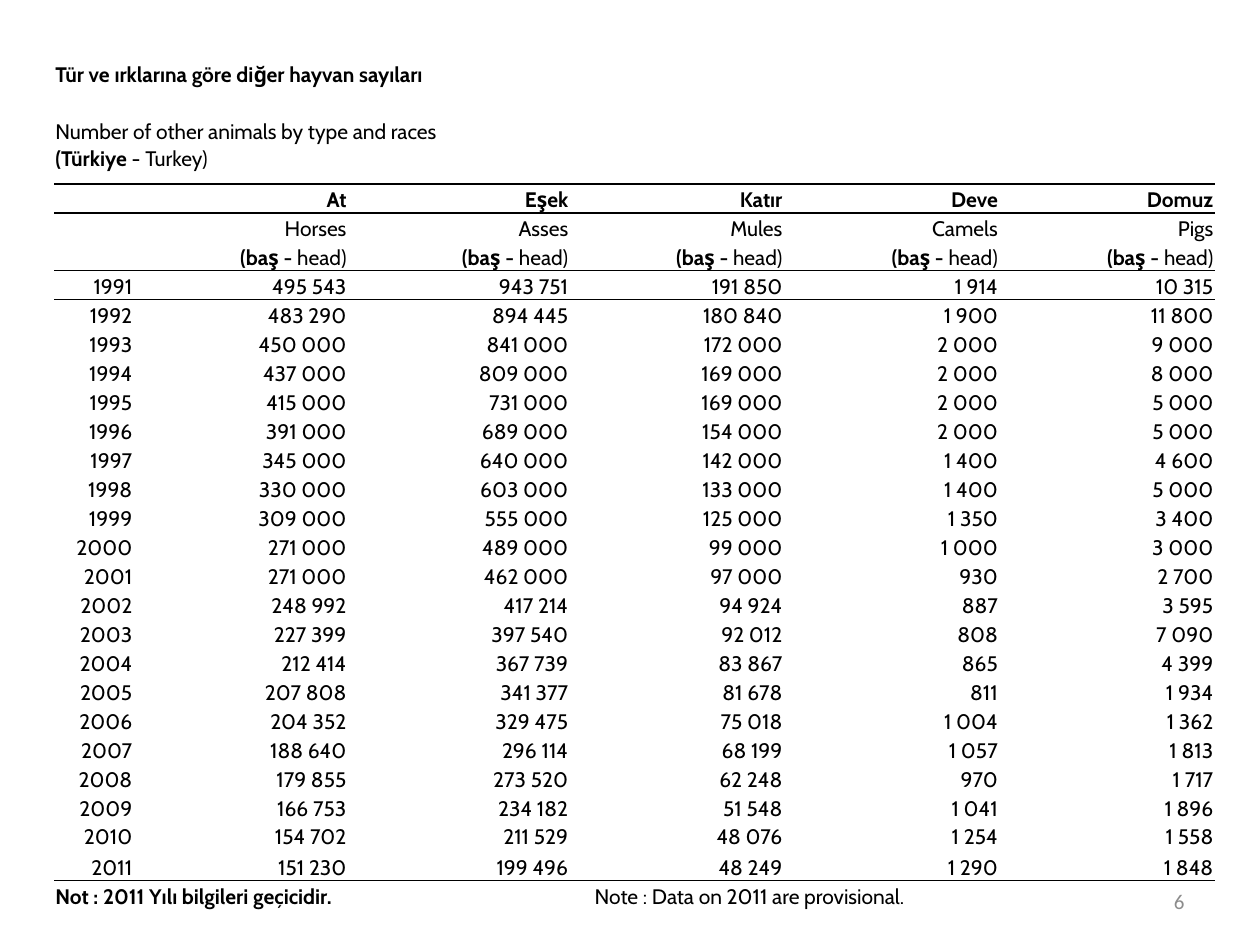
from dataclasses import dataclass

from lxml import etree
from pptx import Presentation
from pptx.dml.color import RGBColor
from pptx.enum.text import MSO_ANCHOR, PP_ALIGN
from pptx.oxml.ns import qn
from pptx.util import Inches, Pt

LEFT, RIGHT = PP_ALIGN.LEFT, PP_ALIGN.RIGHT
TOP, MIDDLE, BOTTOM = MSO_ANCHOR.TOP, MSO_ANCHOR.MIDDLE, MSO_ANCHOR.BOTTOM
BLANK_LAYOUT = 6
NO_GRID_STYLE = "{2D5ABB26-0587-4C30-8999-92F81FD0307C}"


@dataclass(frozen=True)
class Theme:
    ink: str = "000000"
    muted: str = "8C8C8C"
    table_font: str = "Cabin"
    number_font: str = "Calibri"
    size: int = 12
    heavy: float = 1
    light: float = 0.5


THEME = Theme()

COLUMN_WIDTHS = [0.63, 1.7, 1.76, 1.7, 1.71, 1.71]
ROW_HEIGHTS = [0.26, 0.45, 0.31] + [0.23] * 23 + [0.24, 0.23]
HEADER_ROW = 3
FIRST_YEAR_ROW = 6
FIRST_YEAR = 1991
NOTE_ROW = len(ROW_HEIGHTS) - 1

ANIMALS = [("At", "Horses"), ("Eşek", "Asses"), ("Katır", "Mules"),
           ("Deve", "Camels"), ("Domuz", "Pigs")]

# One row a year: horses, asses, mules, camels, pigs
COUNTS = [
    (495543, 943751, 191850, 1914, 10315),
    (483290, 894445, 180840, 1900, 11800),
    (450000, 841000, 172000, 2000, 9000),
    (437000, 809000, 169000, 2000, 8000),
    (415000, 731000, 169000, 2000, 5000),
    (391000, 689000, 154000, 2000, 5000),
    (345000, 640000, 142000, 1400, 4600),
    (330000, 603000, 133000, 1400, 5000),
    (309000, 555000, 125000, 1350, 3400),
    (271000, 489000, 99000, 1000, 3000),
    (271000, 462000, 97000, 930, 2700),
    (248992, 417214, 94924, 887, 3595),
    (227399, 397540, 92012, 808, 7090),
    (212414, 367739, 83867, 865, 4399),
    (207808, 341377, 81678, 811, 1934),
    (204352, 329475, 75018, 1004, 1362),
    (188640, 296114, 68199, 1057, 1813),
    (179855, 273520, 62248, 970, 1717),
    (166753, 234182, 51548, 1041, 1896),
    (154702, 211529, 48076, 1254, 1558),
    (151230, 199496, 48249, 1290, 1848),
]


def add_span(para, text, bold=False, font=THEME.table_font, color=THEME.ink):
    span = para.add_run()
    span.text = text
    values = {"name": font, "size": Pt(THEME.size), "bold": bold}
    for name, value in values.items():
        setattr(span.font, name, value)
    span.font.color.rgb = RGBColor.from_string(color)


def write_cell(cell, *spans, align=RIGHT):
    """Each span is a pair of text and bold."""
    para = cell.text_frame.paragraphs[0]
    para.alignment = align
    for text, bold in spans:
        add_span(para, text, bold)


def merge_right(table, row, column, count):
    cell = table.cell(row, column)
    cell.merge(table.cell(row, column + count - 1))
    return cell


def add_border(cell, side, width):
    line = etree.SubElement(cell._tc.get_or_add_tcPr(), qn(f"a:{side}"),
                            w=str(Pt(width)))
    fill = etree.SubElement(line, qn("a:solidFill"))
    etree.SubElement(fill, qn("a:srgbClr"), val=THEME.ink)


def format_cell(cell, anchor):
    values = {"margin_left": Inches(0.01), "margin_right": Inches(0.01),
              "margin_top": Inches(0.01), "margin_bottom": 0,
              "vertical_anchor": anchor}
    for name, value in values.items():
        setattr(cell, name, value)
    cell.fill.background()
    # Empty cells need the small type size too, or their rows grow
    para = cell.text_frame.paragraphs[0]
    if not para.runs:
        etree.SubElement(para._p, qn("a:endParaRPr"), sz=str(THEME.size * 100))


def add_grid(page):
    frame = page.shapes.add_table(
        len(ROW_HEIGHTS), len(COLUMN_WIDTHS), Inches(0.43), Inches(0.44),
        Inches(sum(COLUMN_WIDTHS)), Inches(sum(ROW_HEIGHTS)))
    table = frame.table
    table.first_row = table.horz_banding = False
    table._tbl.tblPr.find(qn("a:tableStyleId")).text = NO_GRID_STYLE
    for column, width in zip(table.columns, COLUMN_WIDTHS):
        column.width = Inches(width)
    for row, height in zip(table.rows, ROW_HEIGHTS):
        row.height = Inches(height)
    return table


def write_headings(table):
    headings = [
        (4, [("Tür ve ırklarına göre diğer hayvan sayıları", True)]),
        (3, [("Number of other animals by type and races", False)]),
        (2, [("(Türkiye", True), (" - Turkey)", False)]),
    ]
    for row, (count, spans) in enumerate(headings):
        write_cell(merge_right(table, row, 0, count), *spans, align=LEFT)


def write_animals(table):
    for column, (turkish, english) in enumerate(ANIMALS, start=1):
        write_cell(table.cell(HEADER_ROW, column), (turkish, True))
        write_cell(table.cell(HEADER_ROW + 1, column), (english, False))
        write_cell(table.cell(HEADER_ROW + 2, column),
                   ("(baş - ", True), ("head)", False))


def write_counts(table):
    for index, counts in enumerate(COUNTS):
        row = FIRST_YEAR_ROW + index
        write_cell(table.cell(row, 0), (str(FIRST_YEAR + index), False))
        for column, count in enumerate(counts, start=1):
            text = f"{count:,}".replace(",", " ")
            write_cell(table.cell(row, column), (text, False))


def write_notes(table):
    write_cell(merge_right(table, NOTE_ROW, 0, 3),
               ("Not : 2011 Yılı bilgileri geçicidir.", True), align=LEFT)
    english = merge_right(table, NOTE_ROW, 3, 2)
    write_cell(english, ("Note : Data on 2011 are provisional.", False),
               align=LEFT)
    properties = english.text_frame.paragraphs[0]._p.get_or_add_pPr()
    properties.set("marL", str(Inches(0.19)))


def finish_table(table):
    # Rules lie above these rows
    rules = {HEADER_ROW: THEME.heavy, FIRST_YEAR_ROW: THEME.light,
             NOTE_ROW: THEME.heavy}
    for row in range(len(ROW_HEIGHTS)):
        for column in range(len(COLUMN_WIDTHS)):
            cell = table.cell(row, column)
            for side, ruled_row in (("lnT", row), ("lnB", row + 1)):
                if ruled_row in rules:
                    add_border(cell, side, rules[ruled_row])
            format_cell(cell, TOP if row == HEADER_ROW - 1 else BOTTOM)


def add_page_number(page, text):
    box = page.shapes.add_textbox(Inches(7.17), Inches(6.95),
                                  Inches(2.33), Inches(0.4))
    box.text_frame.word_wrap = True
    box.text_frame.vertical_anchor = MIDDLE
    para = box.text_frame.paragraphs[0]
    para.alignment = RIGHT
    add_span(para, text, font=THEME.number_font, color=THEME.muted)


def main():
    deck = Presentation()
    deck.slide_width, deck.slide_height = Inches(10), Inches(7.5)
    page = deck.slides.add_slide(deck.slide_layouts[BLANK_LAYOUT])

    # Table with its headings and notes
    table = add_grid(page)
    write_headings(table)
    write_animals(table)
    write_counts(table)
    write_notes(table)
    finish_table(table)

    # Footer
    add_page_number(page, "6")
    deck.save("out.pptx")


if __name__ == "__main__":
    main()
